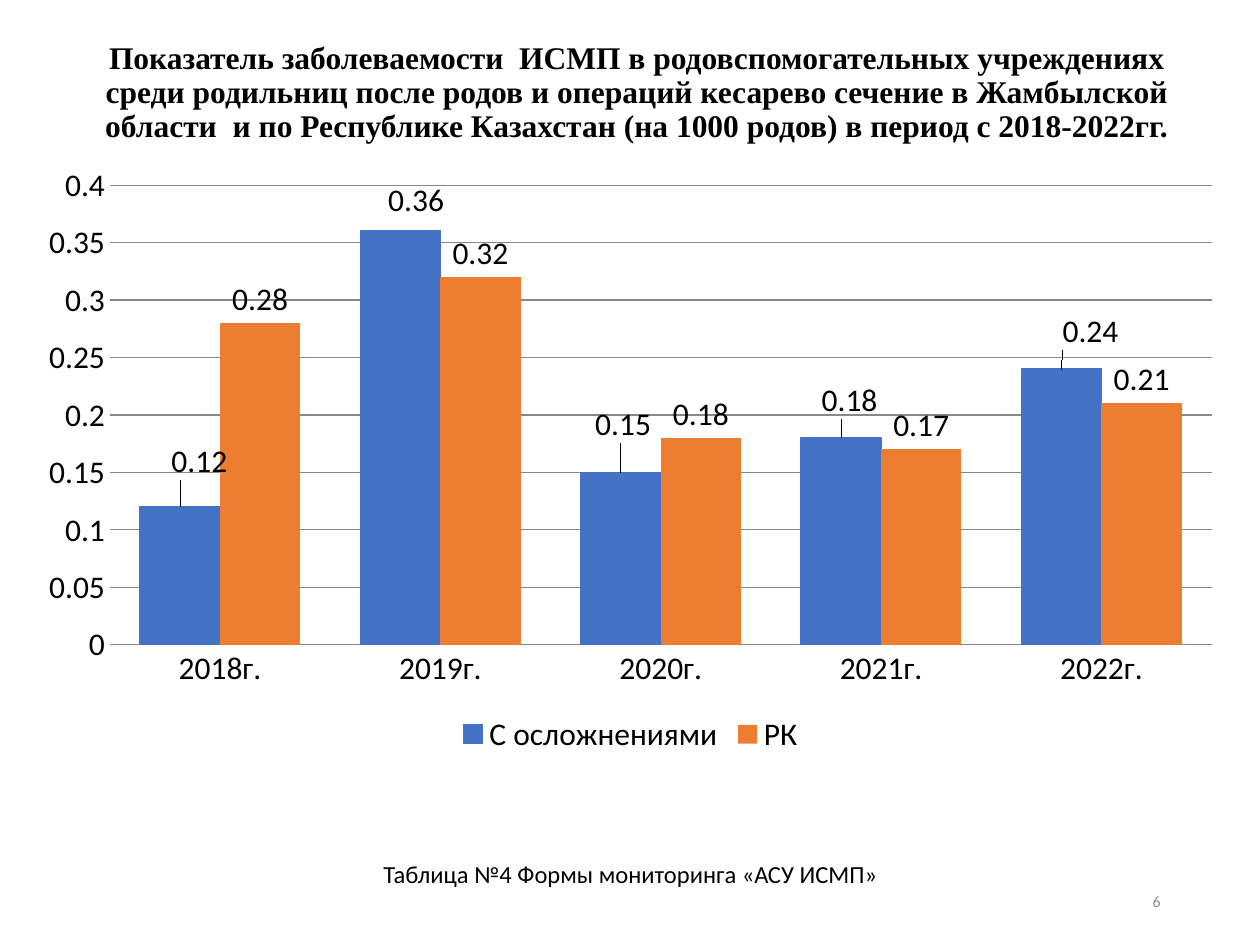
from pptx import Presentation
from pptx.chart.data import CategoryChartData
from pptx.dml.color import RGBColor
from pptx.enum.chart import (XL_CHART_TYPE as ChartType, XL_LABEL_POSITION as LabelPos,
                             XL_LEGEND_POSITION as LegendPos, XL_TICK_MARK as Tick)
from pptx.enum.text import MSO_ANCHOR as Anchor, PP_ALIGN as Align
from pptx.oxml import parse_xml
from pptx.oxml.ns import nsdecls
from pptx.util import Inches, Pt

COLORS = {"text": "000000", "muted": "8C8C8C", "grid": "878787",
          "complications": "4472C4", "republic": "ED7D31"}

YEARS = ["2018г.", "2019г.", "2020г.", "2021г.", "2022г."]
RATES = [("С осложнениями", "complications", [0.12, 0.36, 0.15, 0.18, 0.24]),
         ("РК", "republic", [0.28, 0.32, 0.18, 0.17, 0.21])]
# Shift of each label of the first series, as fractions of the chart
LABEL_SHIFTS = [(0.016, -0.035), (0.013, -0.012), (0.002, -0.04),
                (0.007, -0.023), (0.024, -0.023)]
PLOT_BOX = {"x": 0.07, "y": 0.05, "w": 0.91, "h": 0.76}


def rgb(name):
    return RGBColor.from_string(COLORS[name])


def style_font(font, size, color="text", **values):
    for key, value in {"name": "Calibri", "size": Pt(size), **values}.items():
        setattr(font, key, value)
    font.color.rgb = rgb(color)


def add_text(slide, box, text, size, align, anchor, color="text", spacing=None, **font):
    frame = slide.shapes.add_textbox(*map(Inches, box)).text_frame
    frame.word_wrap = True
    frame.vertical_anchor = anchor
    paragraph = frame.paragraphs[0]
    paragraph.alignment = align
    paragraph.line_spacing = spacing
    run = paragraph.add_run()
    run.text = text
    style_font(run.font, size, color, **font)


def manual_layout(modes, values):
    parts = [f'<c:{key} val="{value}"/>' for key, value in {**modes, **values}.items()]
    return parse_xml(f'<c:layout {nsdecls("c")}><c:manualLayout>{"".join(parts)}'
                     '</c:manualLayout></c:layout>')


def style_axes(chart):
    years, rates = chart.category_axis, chart.value_axis
    for axis in (years, rates):
        axis.major_tick_mark = axis.minor_tick_mark = Tick.NONE
    years.format.line.color.rgb = rgb("grid")
    rates.format.line.fill.background()
    rates.minimum_scale, rates.maximum_scale, rates.major_unit = 0, 0.4, 0.05
    rates.tick_labels.number_format = "General"
    rates.tick_labels.number_format_is_linked = False
    rates.major_gridlines.format.line.color.rgb = rgb("grid")
    rates.major_gridlines.format.line.width = Pt(0.75)


def add_rates_chart(slide, box):
    data = CategoryChartData()
    data.categories = YEARS
    for name, _, values in RATES:
        data.add_series(name, values)
    chart = slide.shapes.add_chart(ChartType.COLUMN_CLUSTERED, *map(Inches, box), data).chart
    chart.has_title = False
    style_font(chart.font, 18)
    style_axes(chart)

    # Legend
    chart.has_legend = True
    chart.legend.position = LegendPos.BOTTOM
    chart.legend.include_in_layout = False

    # Columns and their labels
    plot = chart.plots[0]
    plot.gap_width, plot.overlap, plot.vary_by_categories = 75, 0, False
    for series, (_, color, _) in zip(plot.series, RATES):
        series.format.fill.solid()
        series.format.fill.fore_color.rgb = rgb(color)
        series.data_labels.show_value = True
        series.data_labels.position = LabelPos.OUTSIDE_END
        style_font(series.data_labels.font, 18)
    complications = plot.series[0]
    complications.format.line.color.rgb = rgb("complications")
    complications.format.line.width = Pt(0.75)
    for index, (dx, dy) in enumerate(LABEL_SHIFTS):
        label = complications.points[index].data_label
        label.position = LabelPos.OUTSIDE_END
        style_font(label.font, 18)
    labels = complications.data_labels._element
    for idx, (dx, dy) in zip(labels.xpath("c:dLbl/c:idx"), LABEL_SHIFTS):
        idx.addnext(manual_layout({}, {"x": dx, "y": dy}))

    # Fixed plot area
    plot_area = chart._chartSpace.chart.plotArea
    for layout in plot_area.xpath("c:layout"):
        plot_area.remove(layout)
    plot_area.insert(0, manual_layout(
        {"layoutTarget": "inner", "xMode": "edge", "yMode": "edge"}, PLOT_BOX))


def build_slide(deck):
    slide = deck.slides.add_slide(deck.slide_layouts[6])
    add_text(slide, (0.43, 0.25, 9.25, 0.98),
             "Показатель заболеваемости  ИСМП в родовспомогательных учреждениях среди "
             "родильниц после родов и операций кесарево сечение в Жамбылской области  и по "
             "Республике Казахстан (на 1000 родов) в период с 2018-2022гг.",
             18, Align.CENTER, Anchor.MIDDLE, spacing=0.9, name="Times New Roman", bold=True)
    add_rates_chart(slide, (0.2, 1.23, 9.61, 4.8))
    # Page number and source note
    add_text(slide, (7.06, 6.95, 2.25, 0.4), "6", 9, Align.RIGHT, Anchor.MIDDLE, "muted")
    add_text(slide, (2.37, 6.77, 5.27, 0.34), "Таблица №4 Формы мониторинга «АСУ ИСМП»",
             14, Align.CENTER, Anchor.TOP)


def main():
    deck = Presentation()
    deck.slide_width, deck.slide_height = Inches(10), Inches(7.5)
    build_slide(deck)
    deck.save("out.pptx")


if __name__ == "__main__":
    main()
